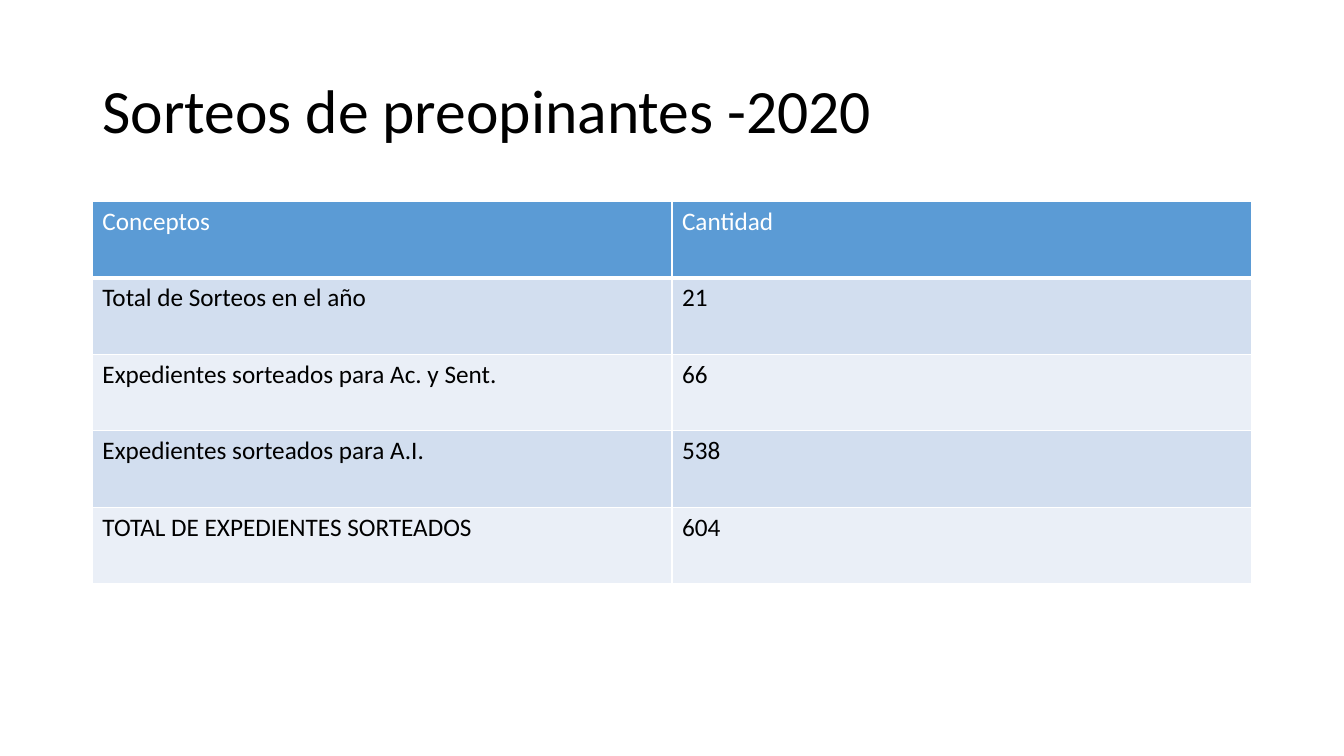
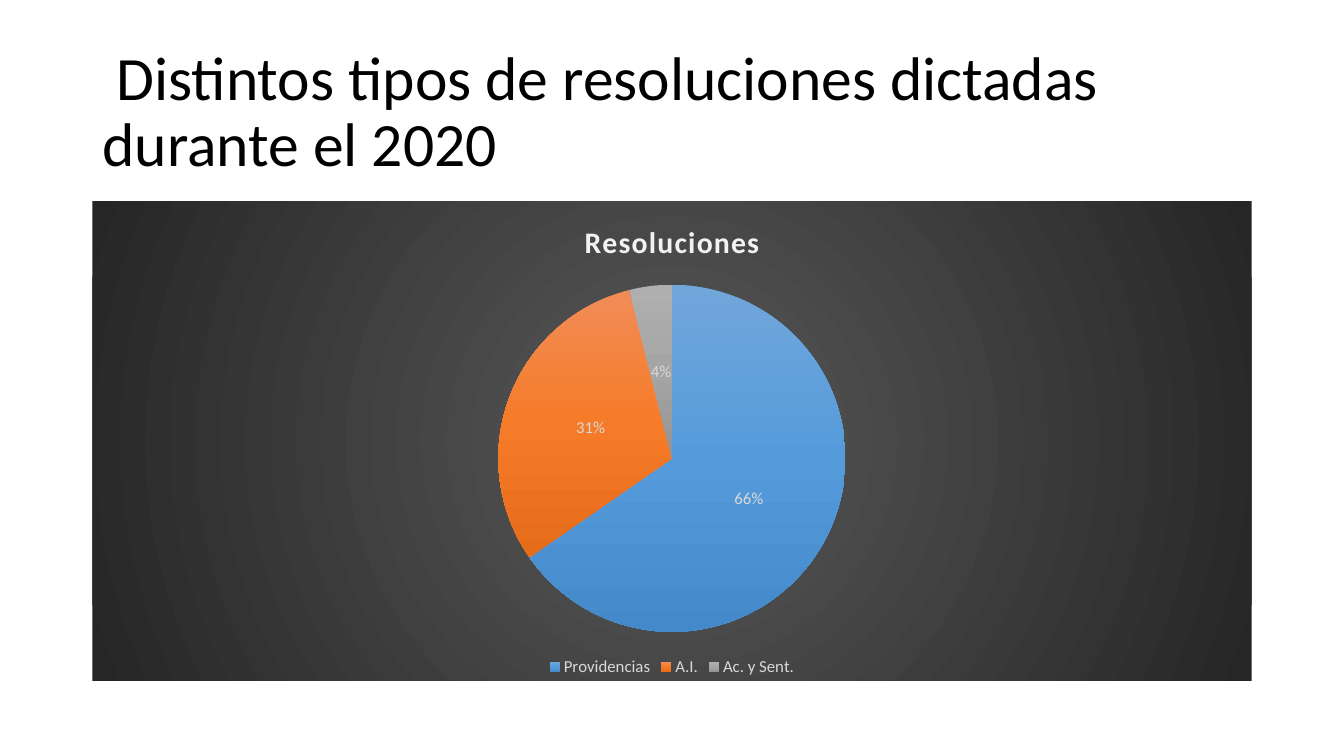
from pptx import Presentation
from pptx.chart.data import CategoryChartData
from pptx.dml.color import RGBColor
from pptx.enum.chart import XL_CHART_TYPE, XL_LABEL_POSITION, XL_LEGEND_POSITION
from pptx.enum.text import MSO_ANCHOR, MSO_AUTO_SIZE, PP_ALIGN
from pptx.oxml import parse_xml
from pptx.oxml.ns import nsdecls, qn
from pptx.util import Pt


def tint(code):
    return RGBColor.from_string(code)


def blend(stops, shade):
    marks = "".join(
        f'<a:gs pos="{spot * 1000}"><a:srgbClr val="{code}"/></a:gs>' for spot, code in stops
    )
    return f'<a:gradFill {nsdecls("a")} rotWithShape="1"><a:gsLst>{marks}</a:gsLst>{shade}</a:gradFill>'


class Deck:
    FACE = "Calibri"
    BLACK, WHITE, BLUE = "000000", "FFFFFF", "5B9BD5"
    BANDS = ("D2DEEF", "EAEFF7")
    PALE, LIGHT = "D9D9D9", "F2F2F2"
    LEFT, WIDTH, TOP = 66, 828, 143.75
    DOWN = '<a:lin ang="5400000" scaled="0"/>'
    ROUND = '<a:path path="circle"><a:fillToRect l="50000" t="50000" r="50000" b="50000"/></a:path>'

    def __init__(self):
        self.show = Presentation()
        self.show.slide_width, self.show.slide_height = Pt(960), Pt(540)

    def style(self, font, size, code, bold=False):
        font.name, font.size, font.bold = self.FACE, Pt(size), bold
        font.color.rgb = tint(code)

    def page(self, text):
        self.slide = self.show.slides.add_slide(self.show.slide_layouts[5])
        title = self.slide.shapes.title
        title.left, title.top = Pt(self.LEFT), Pt(28.75)
        title.width, title.height = Pt(self.WIDTH), Pt(104.4)
        frame = title.text_frame
        frame.text = text
        frame.word_wrap, frame.auto_size = True, MSO_AUTO_SIZE.NONE
        frame.vertical_anchor = MSO_ANCHOR.MIDDLE
        para = frame.paragraphs[0]
        para.alignment, para.line_spacing = PP_ALIGN.LEFT, 0.9
        self.style(para.runs[0].font, 44, self.BLACK)

    def edge(self, cell, base):
        props = cell._tc.get_or_add_tcPr()
        for place, side in enumerate("LRTB"):
            width = Pt(base if side == "B" else 1)
            props.insert(place, parse_xml(
                f'<a:ln{side} {nsdecls("a")} w="{width}"><a:solidFill>'
                f'<a:srgbClr val="{self.WHITE}"/></a:solidFill></a:ln{side}>'
            ))

    def table(self, rows, height):
        count, span = len(rows), len(rows[0])
        grid = self.slide.shapes.add_table(
            count, span, Pt(self.LEFT), Pt(self.TOP), Pt(self.WIDTH), Pt(height * count)
        ).table
        for col in grid.columns:
            col.width = Pt(self.WIDTH / span)
        for y, row in enumerate(rows):
            grid.rows[y].height = Pt(height)
            for x, text in enumerate(row):
                cell = grid.cell(y, x)
                cell.text = text
                cell.fill.solid()
                cell.fill.fore_color.rgb = tint(self.BANDS[(y - 1) % 2] if y else self.BLUE)
                self.style(cell.text_frame.paragraphs[0].runs[0].font, 18,
                           self.BLACK if y else self.WHITE)
                self.edge(cell, 1 if y else 3)

    def pie(self, name, parts, height):
        data = CategoryChartData()
        data.categories = [label for label, value, stops in parts]
        data.add_series(name, [value for label, value, stops in parts])
        chart = self.slide.shapes.add_chart(
            XL_CHART_TYPE.PIE, Pt(self.LEFT), Pt(self.TOP), Pt(self.WIDTH), Pt(height), data
        ).chart
        self.style(chart.font, 10, self.BLACK)
        back = blend(((0, "595959"), (100, "262626")), self.ROUND)
        chart._chartSpace.find(qn("c:chart")).addnext(parse_xml(
            f'<c:spPr {nsdecls("c", "a")}>{back}<a:ln><a:noFill/></a:ln></c:spPr>'
        ))

        chart.has_title = True
        head = chart.chart_title.text_frame
        head.text = name
        run = head.paragraphs[0].runs[0]
        self.style(run.font, 21.3, self.LIGHT, True)
        run._r.get_or_add_rPr().set("spc", "100")
        chart.chart_title.include_in_layout = False

        chart.has_legend = True
        chart.legend.position = XL_LEGEND_POSITION.BOTTOM
        chart.legend.include_in_layout = False
        self.style(chart.legend.font, 12, self.PALE)

        plot = chart.plots[0]
        plot.vary_by_categories = True
        for spot, (label, value, stops) in enumerate(parts):
            look = plot.series[0].points[spot].format
            look.line.fill.background()
            look.fill.gradient()
            props = look.fill._xPr
            old = props.find(qn("a:gradFill"))
            props.replace(old, parse_xml(blend(zip((0, 50, 100), stops), self.DOWN)))

        plot.has_data_labels = True
        tags = plot.data_labels
        tags.show_value, tags.show_percentage = True, False
        tags.number_format, tags.number_format_is_linked = '0"%"', False
        tags.position = XL_LABEL_POSITION.CENTER
        self.style(tags.font, 12, self.PALE)


def main():
    deck = Deck()
    deck.page("Sorteos de preopinantes -2020")
    deck.table((
        ("Conceptos", "Cantidad"),
        ("Total de Sorteos en el año", "21"),
        ("Expedientes sorteados para Ac. y Sent.", "66"),
        ("Expedientes sorteados para A.I.", "538"),
        ("TOTAL DE EXPEDIENTES SORTEADOS", "604"),
    ), 54.7)

    deck.page(" Distintos tipos de resoluciones dictadas durante el 2020")
    deck.pie("Resoluciones", (
        ("Providencias", 66, ("71A6DB", "559BDB", "448ACA")),
        ("A.I.", 31, ("F18C57", "F67B28", "E56C19")),
        ("Ac. y Sent.", 4, ("AFAFAF", "A5A5A5", "939393")),
    ), 342.7)
    deck.show.save("out.pptx")


if __name__ == "__main__":
    main()
